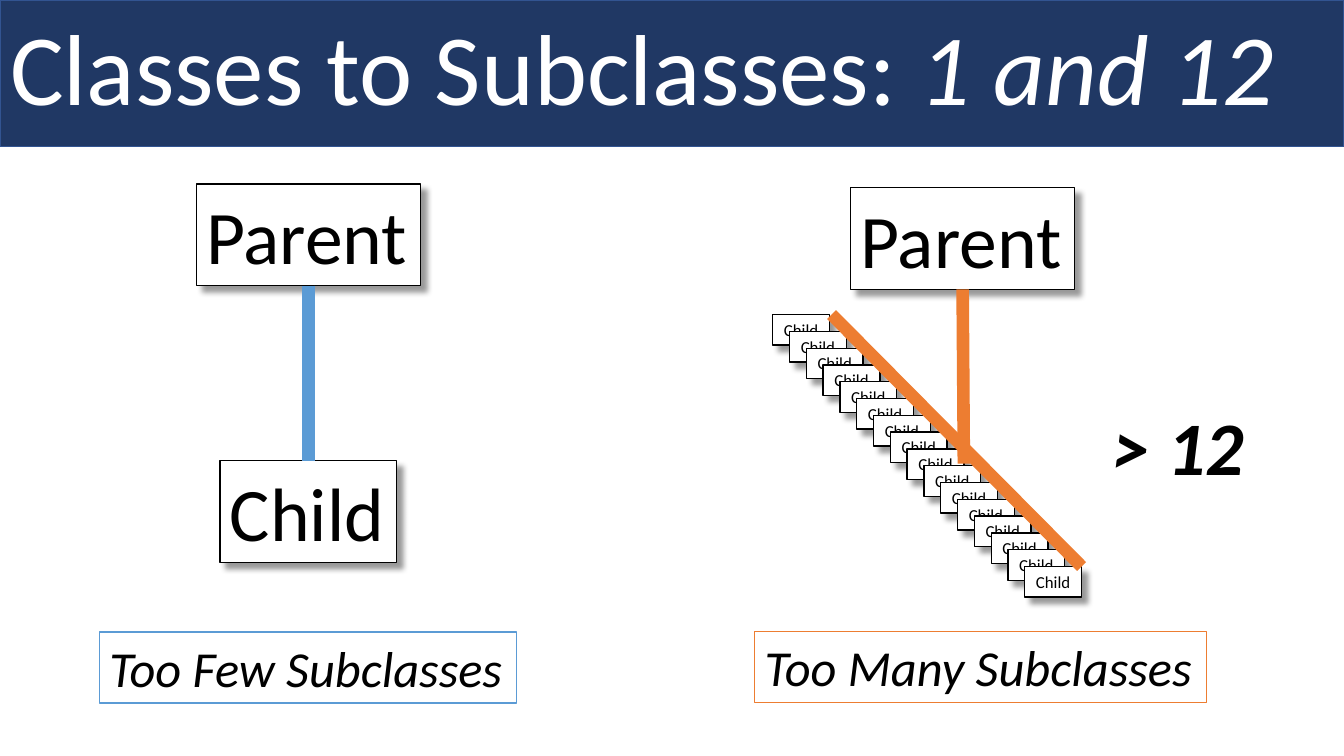
from lxml import etree
from pptx import Presentation
from pptx.dml.color import RGBColor
from pptx.enum.shapes import MSO_CONNECTOR
from pptx.enum.text import MSO_ANCHOR, MSO_AUTO_SIZE, PP_ALIGN
from pptx.oxml.ns import qn
from pptx.util import Pt

STRAIGHT = MSO_CONNECTOR.STRAIGHT
MIDDLE, TOP = MSO_ANCHOR.MIDDLE, MSO_ANCHOR.TOP
GROW, FIXED = MSO_AUTO_SIZE.SHAPE_TO_FIT_TEXT, MSO_AUTO_SIZE.NONE
LEFT, CENTER = PP_ALIGN.LEFT, PP_ALIGN.CENTER
TOP_SIDE, BOTTOM_SIDE = 0, 2
TITLE_ONLY = 5
FONT = "Calibri"
COLORS = {
    "navy": "203864",
    "navy_edge": "325491",
    "blue": "5B9BD5",
    "orange": "ED7D31",
    "black": "000000",
    "white": "FFFFFF",
}
CHILD_COUNT = 16
CHILD_STEP = 12


def rgb(name):
    return RGBColor.from_string(COLORS[name])


def add_text(p, text, size=54, color="black", bold=False, italic=False):
    r = p.add_run()
    r.text = text
    f = r.font
    f.name, f.size, f.bold, f.italic = FONT, Pt(size), bold, italic
    f.color.rgb = rgb(color)


def paint(sp, fill, line):
    sp.fill.solid()
    sp.fill.fore_color.rgb = rgb(fill)
    sp.line.color.rgb = rgb(line)
    sp.line.width = Pt(1)


def add_shadow(sp):
    sp.shadow.inherit = False
    effects = sp.element.spPr.find(qn("a:effectLst"))
    shadow = etree.SubElement(
        effects, qn("a:outerShdw"), blurRad=str(Pt(4)), dist=str(Pt(6)),
        dir="2700000", algn="tl", rotWithShape="0")
    color = etree.SubElement(shadow, qn("a:srgbClr"), val=COLORS["black"])
    etree.SubElement(color, qn("a:alpha"), val="40000")


def add_box(shapes, text, x, y, w, h, line=None, shadow=False, wrap=False,
            align=LEFT, **fmt):
    sp = shapes.add_textbox(Pt(x), Pt(y), Pt(w), Pt(h))
    if line:
        paint(sp, "white", line)
    if shadow:
        add_shadow(sp)
    tf = sp.text_frame
    tf.word_wrap, tf.auto_size, tf.vertical_anchor = wrap, GROW, TOP
    p = tf.paragraphs[0]
    p.alignment = align
    add_text(p, text, **fmt)
    return sp


def add_class(shapes, text, x, y, w, h, **fmt):
    return add_box(shapes, text, x, y, w, h, line="black", shadow=True, **fmt)


def add_line(s, x1, y1, x2, y2, color, begin=None, end=None):
    cx = s.shapes.add_connector(STRAIGHT, Pt(x1), Pt(y1), Pt(x2), Pt(y2))
    cx.line.color.rgb = rgb(color)
    cx.line.width = Pt(9)
    etree.SubElement(cx.element.spPr, qn("a:effectLst"))
    if begin:
        cx.begin_connect(begin, BOTTOM_SIDE)
    if end:
        cx.end_connect(end, TOP_SIDE)


def add_title(s):
    sp = s.shapes.title
    sp.left, sp.top, sp.width, sp.height = Pt(0), Pt(0), Pt(960), Pt(104.5)
    paint(sp, "navy", "navy_edge")
    tf = sp.text_frame
    tf.word_wrap, tf.auto_size, tf.vertical_anchor = True, FIXED, MIDDLE
    p = tf.paragraphs[0]
    p.alignment, p.line_spacing = LEFT, 0.9
    add_text(p, "Classes to Subclasses: ", size=72, color="white")
    add_text(p, "1 and 12", size=72, color="white", italic=True)


def add_child_stack(s):
    stack = s.shapes.add_group_shape()
    for i in range(CHILD_COUNT):
        offset = i * CHILD_STEP
        add_class(stack.shapes, "Child", 552 + offset, 224.7 + offset,
                  40.5, 21.8, wrap=True, align=CENTER, size=12)


def main():
    prs = Presentation()
    prs.slide_width, prs.slide_height = Pt(960), Pt(540)
    s = prs.slides.add_slide(prs.slide_layouts[TITLE_ONLY])
    add_title(s)

    few_parent = add_class(s.shapes, "Parent", 140.3, 131.3, 160, 72.7)
    only_child = add_class(s.shapes, "Child", 157.2, 329, 126.2, 72.7)
    add_box(s.shapes, "Too Few Subclasses", 71, 451.4, 298, 50.9,
            line="blue", size=36, italic=True)

    add_child_stack(s)
    add_box(s.shapes, "> 12", 787.7, 282.2, 109.4, 72.7,
            bold=True, italic=True)
    many_parent = add_class(s.shapes, "Parent", 607.6, 134, 160, 72.7)
    add_line(s, 220.3, 204, 220.3, 329, "blue", few_parent, only_child)
    add_box(s.shapes, "Too Many Subclasses", 539, 450.9, 322.6, 50.9,
            line="orange", size=36, italic=True)
    add_line(s, 687.6, 206.7, 688.5, 331.2, "orange", many_parent)
    add_line(s, 594, 224.7, 772.6, 404.7, "orange")

    prs.save("out.pptx")


if __name__ == "__main__":
    main()
